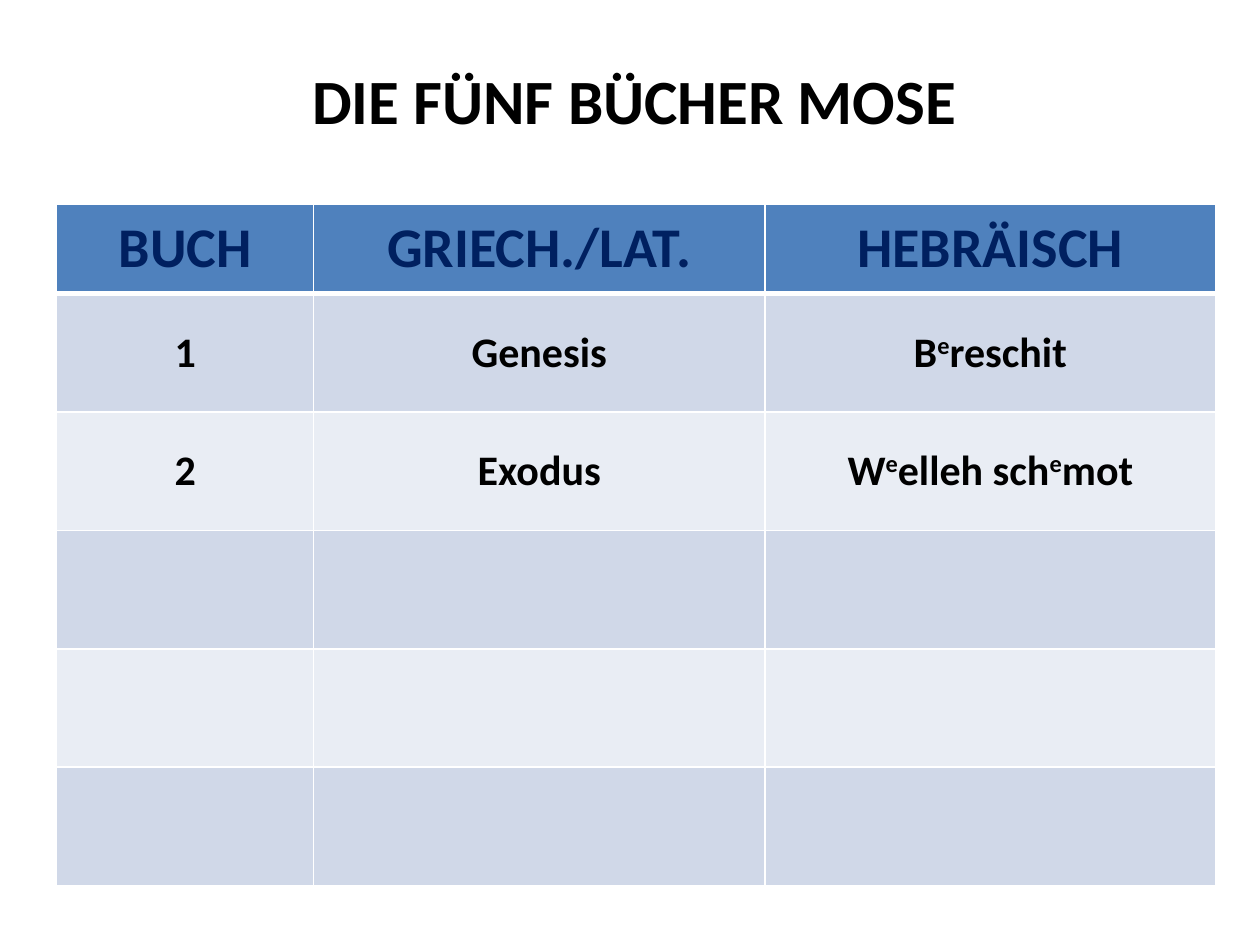
import dataclasses

import lxml.etree
import pptx
import pptx.dml.color
import pptx.enum.text
import pptx.oxml.ns
import pptx.presentation
import pptx.slide
import pptx.table
import pptx.text.text
import pptx.util

BLACK = pptx.dml.color.RGBColor(0x00, 0x00, 0x00)
WHITE = pptx.dml.color.RGBColor(0xFF, 0xFF, 0xFF)
NAVY = pptx.dml.color.RGBColor(0x00, 0x20, 0x60)
HEADER_BLUE = pptx.dml.color.RGBColor(0x4F, 0x81, 0xBD)
BAND_DARK = pptx.dml.color.RGBColor(0xD0, 0xD8, 0xE8)
BAND_LIGHT = pptx.dml.color.RGBColor(0xE9, 0xED, 0xF4)

FONT = "Calibri"
SUPERSCRIPT_MARK = "^"
COLUMN_WIDTHS = (2.04, 3.58, 3.58)
HEADER_HEIGHT = 0.71
BOOK_HEIGHT = 0.94
BOOK_COUNT = 5
HEADINGS = ("BUCH", "GRIECH./LAT.", "HEBRÄISCH")
BOOKS = (
    ("1", "Genesis", "B^e^reschit"),
    ("2", "Exodus", "W^e^elleh sch^e^mot"),
)


@dataclasses.dataclass(frozen=True)
class RowStyle:
    fill: pptx.dml.color.RGBColor
    text: pptx.dml.color.RGBColor
    size: int
    top_line: int
    bottom_line: int


HEADER = RowStyle(HEADER_BLUE, NAVY, 32, 1, 3)
FIRST_BOOK = RowStyle(BAND_DARK, BLACK, 24, 3, 1)
ODD_BOOK = RowStyle(BAND_DARK, BLACK, 24, 1, 1)
EVEN_BOOK = RowStyle(BAND_LIGHT, BLACK, 24, 1, 1)


def write(paragraph: pptx.text.text._Paragraph, text: str, size: int,
          color: pptx.dml.color.RGBColor) -> None:
    paragraph.alignment = pptx.enum.text.PP_ALIGN.CENTER
    paragraph.font.name = FONT
    paragraph.font.size = pptx.util.Pt(size)
    paragraph.font.bold = True
    paragraph.font.color.rgb = color
    for index, piece in enumerate(text.split(SUPERSCRIPT_MARK)):
        run = paragraph.add_run()
        run.text = piece
        if index % 2:
            run._r.get_or_add_rPr().set("baseline", "30000")


def add_border(cell: pptx.table._Cell, side: str, width: int) -> None:
    qn = pptx.oxml.ns.qn
    line = lxml.etree.SubElement(
        cell._tc.get_or_add_tcPr(), qn(f"a:ln{side}"), w=str(pptx.util.Pt(width)))
    fill = lxml.etree.SubElement(line, qn("a:solidFill"))
    lxml.etree.SubElement(fill, qn("a:srgbClr"), val=str(WHITE))


def format_cell(cell: pptx.table._Cell, text: str, style: RowStyle) -> None:
    borders = {"L": 1, "R": 1, "T": style.top_line, "B": style.bottom_line}
    for side, width in borders.items():
        add_border(cell, side, width)
    cell.fill.solid()
    cell.fill.fore_color.rgb = style.fill
    cell.vertical_anchor = pptx.enum.text.MSO_ANCHOR.MIDDLE
    if text:
        write(cell.text_frame.paragraphs[0], text, style.size, style.text)


def add_title(slide: pptx.slide.Slide, text: str) -> None:
    title = slide.shapes.title
    title.left, title.top, title.width, title.height = map(
        pptx.util.Inches, (0.43, 0.44, 9.21, 0.63))
    title.fill.solid()
    title.fill.fore_color.rgb = WHITE
    color = title.fill._xPr.find(".//" + pptx.oxml.ns.qn("a:srgbClr"))
    lxml.etree.SubElement(color, pptx.oxml.ns.qn("a:alpha"), val="60000")
    title.text_frame.vertical_anchor = pptx.enum.text.MSO_ANCHOR.TOP
    write(title.text_frame.paragraphs[0], text, 36, BLACK)


def add_books_table(slide: pptx.slide.Slide) -> None:
    heights = (HEADER_HEIGHT,) + (BOOK_HEIGHT,) * BOOK_COUNT
    empty_books = (("",) * len(HEADINGS),) * (BOOK_COUNT - len(BOOKS))
    contents = (HEADINGS,) + BOOKS + empty_books
    styles = (HEADER, FIRST_BOOK, EVEN_BOOK, ODD_BOOK, EVEN_BOOK, ODD_BOOK)
    books = slide.shapes.add_table(
        len(heights), len(COLUMN_WIDTHS),
        pptx.util.Inches(0.45), pptx.util.Inches(1.62),
        pptx.util.Inches(sum(COLUMN_WIDTHS)), pptx.util.Inches(sum(heights))).table
    for column, width in zip(books.columns, COLUMN_WIDTHS):
        column.width = pptx.util.Inches(width)
    for row, height, texts, style in zip(books.rows, heights, contents, styles):
        row.height = pptx.util.Inches(height)
        for cell, text in zip(row.cells, texts):
            format_cell(cell, text, style)


def main() -> None:
    presentation = pptx.Presentation()
    presentation.slide_width = pptx.util.Inches(10)
    presentation.slide_height = pptx.util.Inches(7.5)
    slide = presentation.slides.add_slide(presentation.slide_layouts.get_by_name("Title Only"))
    add_title(slide, "DIE FÜNF BÜCHER MOSE")
    add_books_table(slide)
    presentation.save("out.pptx")


if __name__ == "__main__":
    main()
